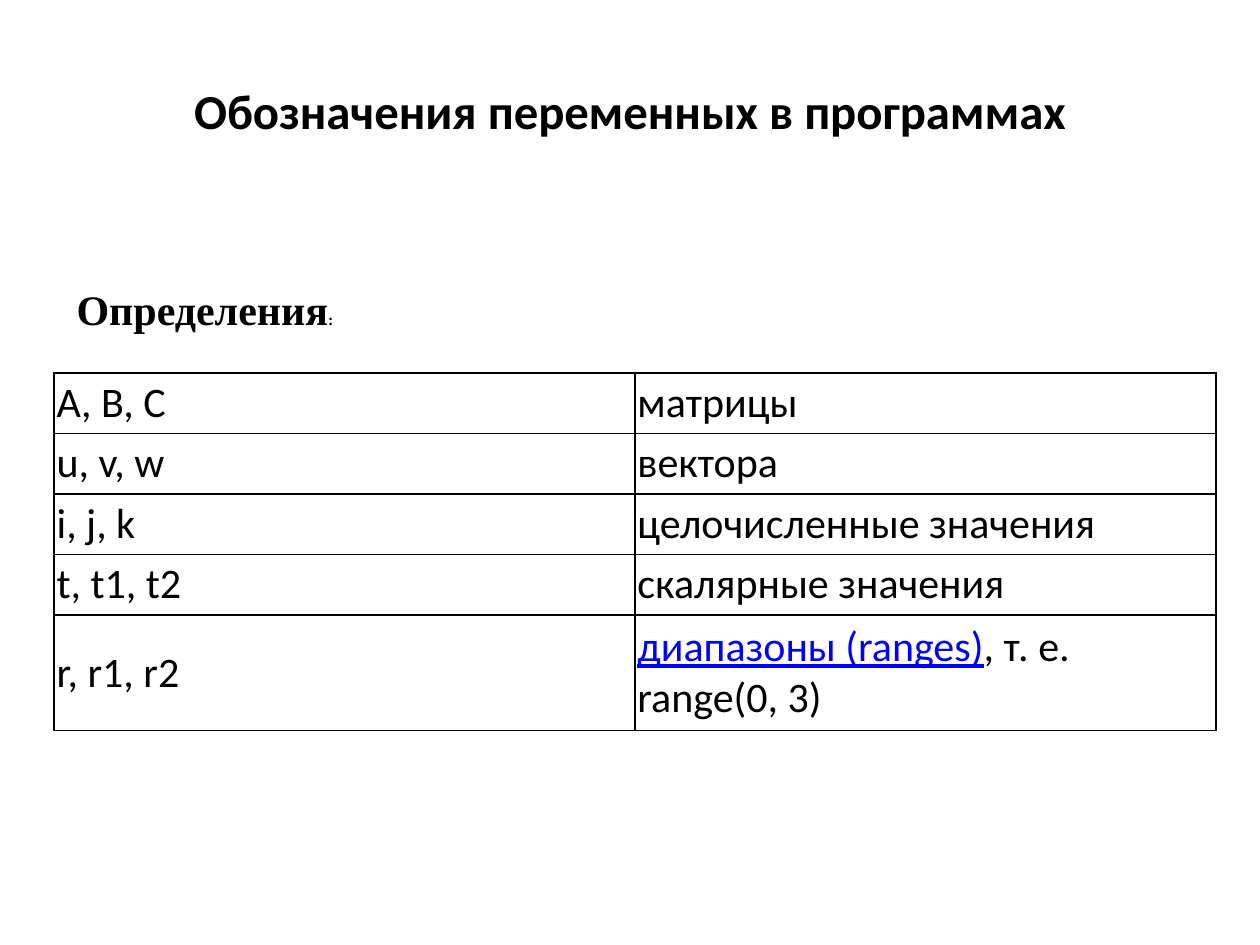
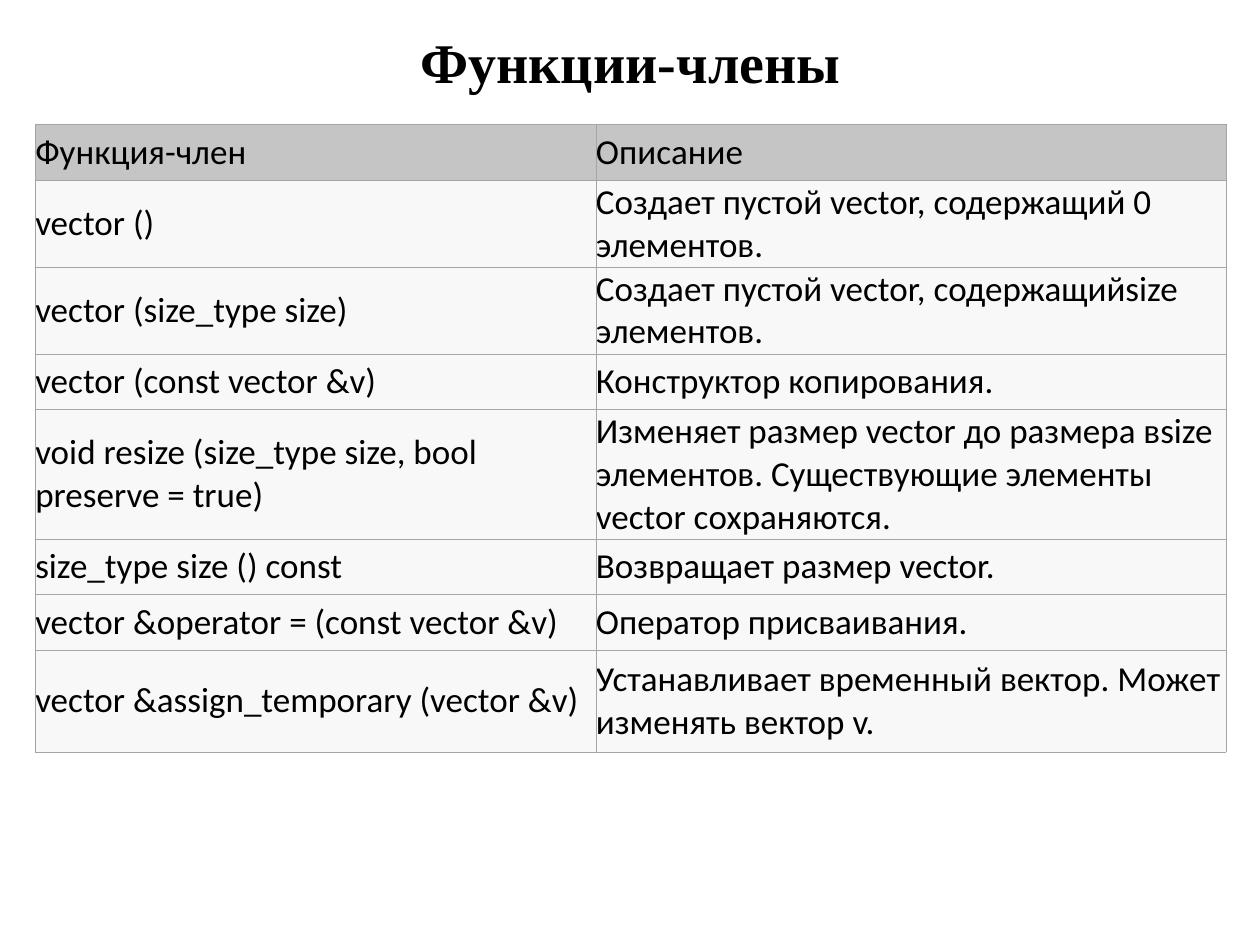
from dataclasses import dataclass

from lxml.etree import SubElement as Sub
from pptx import Presentation
from pptx.dml.color import RGBColor as Rgb
from pptx.enum.text import MSO_ANCHOR as Anchor, MSO_AUTO_SIZE as Auto, PP_ALIGN as Align
from pptx.oxml.ns import qn
from pptx.util import Inches, Pt


@dataclass(frozen=True)
class Theme:
    sans: str = "Calibri"
    serif: str = "Times New Roman"
    ink: str = "000000"
    link: str = "0000FF"
    head: str = "C5C5C5"
    body: str = "F8F8F8"
    rule: str = "A5A5A5"
    big: float = 32
    title: float = 27.9
    text: float = 24
    cell: float = 20
    tiny: float = 9


T = Theme()

NAMES = {
    "title": "Обозначения переменных в программах",
    "label": ["Определения", (":", {"size": T.tiny})],
    "rows": [
        ("A, B, C", "матрицы"),
        ("u, v, w", "вектора"),
        ("i, j, k", "целочисленные значения"),
        ("t, t1, t2", "скалярные значения"),
        ("r, r1, r2", [("диапазоны (ranges)", {"color": T.link, "line": True}),
                       ", т. е. range(0, 3)"]),
    ],
}

MEMBERS = {
    "title": "Функции-члены",
    "rows": [
        ("Функция-член", "Описание"),
        ("vector ()", "Создает пустой vector, содержащий 0 элементов."),
        ("vector (size_type size)", "Создает пустой vector, содержащийsize элементов."),
        ("vector (const vector &v)", "Конструктор копирования."),
        ("void resize (size_type size, bool preserve = true)",
         "Изменяет размер vector до размера вsize элементов. "
         "Существующие элементы vector сохраняются."),
        ("size_type size () const", "Возвращает размер vector."),
        ("vector &operator = (const vector &v)", "Оператор присваивания."),
        ("vector &assign_temporary (vector &v)",
         "Устанавливает временный вектор. Может изменять вектор v."),
    ],
}


def write(frame, runs, align=Align.LEFT, **base):
    """Write a string, or a list of strings and (string, format) pairs."""
    frame.word_wrap = True
    para = frame.paragraphs[0]
    para.alignment = align
    for part in [runs] if isinstance(runs, str) else runs:
        text, extra = (part, {}) if isinstance(part, str) else part
        look = {"font": T.sans, "size": T.text, "color": T.ink,
                "bold": False, "line": False, **base, **extra}
        run = para.add_run()
        run.text = text
        font = run.font
        font.name, font.size = look["font"], Pt(look["size"])
        font.bold, font.underline = look["bold"], look["line"]
        font.color.rgb = Rgb.from_string(look["color"])


def place(shape, box):
    shape.left, shape.top, shape.width, shape.height = map(Inches, box)


def start(deck, title, box, anchor, **look):
    slide = deck.slides.add_slide(deck.slide_layouts[5])
    head = slide.shapes.title
    place(head, box)
    frame = head.text_frame
    frame.auto_size = Auto.NONE
    frame.vertical_anchor = anchor
    write(frame, title, align=Align.CENTER, bold=True, **look)
    return slide


def edge(cell, color, width):
    props = cell._tc.get_or_add_tcPr()
    for side in ("lnL", "lnR", "lnT", "lnB"):
        line = Sub(props, qn(f"a:{side}"), w=str(Pt(width)))
        Sub(Sub(line, qn("a:solidFill")), qn("a:srgbClr"), val=color)


def grid(slide, rows, spot, cols, highs, size, pad, rule, fills=None):
    """Draw a table; fills holds the colours of the first row and the rest."""
    table = slide.shapes.add_table(
        len(rows), len(cols), *map(Inches, (*spot, sum(cols), sum(highs)))).table
    table.first_row = table.horz_banding = False
    for col, wide in zip(table.columns, cols):
        col.width = Inches(wide)
    for r, (row, high) in enumerate(zip(rows, highs)):
        table.rows[r].height = Inches(high)
        for c, text in enumerate(row):
            cell = table.cell(r, c)
            cell.margin_left = cell.margin_right = Inches(pad)
            cell.margin_top = cell.margin_bottom = Inches(pad)
            cell.vertical_anchor = Anchor.MIDDLE
            write(cell.text_frame, text, size=size)
            edge(cell, *rule)
            if fills:
                cell.fill.solid()
                cell.fill.fore_color.rgb = Rgb.from_string(fills[min(r, 1)])
            else:
                cell.fill.background()


def names(deck):
    slide = start(deck, NAMES["title"], (0.5, 0.22, 9, 1.31), Anchor.MIDDLE,
                  size=T.title)
    grid(slide, NAMES["rows"], (0.43, 2.96), [4.61] * 2, [0.48] * 4 + [0.92],
         T.text, 0.02, (T.ink, 1))
    label = slide.shapes.add_textbox(*map(Inches, (0.51, 2.2, 2.44, 0.5)))
    label.text_frame.vertical_anchor = Anchor.MIDDLE
    write(label.text_frame, NAMES["label"], font=T.serif, bold=True)


def members(deck):
    slide = start(deck, MEMBERS["title"], (1.06, 0.17, 7.89, 1.03), Anchor.TOP,
                  font=T.serif, size=T.big)
    one, two, three = 0.44, 0.69, 1.03
    grid(slide, MEMBERS["rows"], (0.28, 0.99), [4.45, 5],
         [one, two, two, one, three, one, one, 0.81],
         T.cell, 0, (T.rule, 0.6), (T.head, T.body))


def main():
    deck = Presentation()
    deck.slide_width, deck.slide_height = Inches(10), Inches(7.5)
    names(deck)
    members(deck)
    deck.save("out.pptx")


if __name__ == "__main__":
    main()
